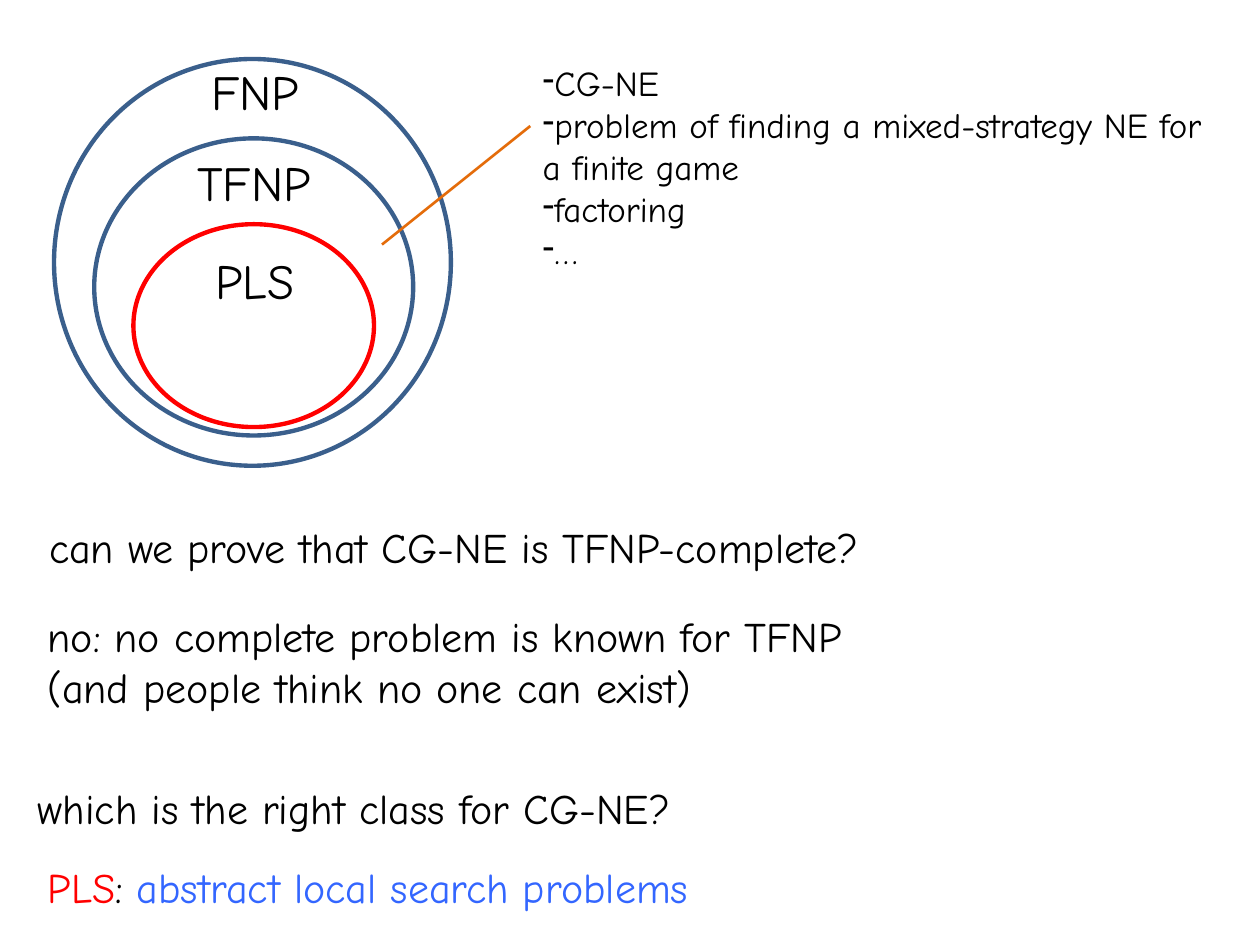
from pptx import Presentation
from pptx.dml.color import RGBColor
from pptx.enum.shapes import MSO_CONNECTOR, MSO_SHAPE
from pptx.enum.text import MSO_AUTO_SIZE, PP_ALIGN
from pptx.oxml.ns import qn
from pptx.util import Cm, Pt
from lxml.etree import SubElement

FONT = "Comic Neue"
BLACK, RED, BLUE = "000000", "FF0000", "3366FF"
RING_BLUE, ORANGE = "3A5F8C", "E46C0A"


def rgb(hex_string):
    """Turn a hex string into a colour."""
    return RGBColor.from_string(hex_string)


def style_run(run, size, color=BLACK):
    """Give a run its font, size and colour."""
    run.font.name = FONT
    run.font.size = Pt(size)
    run.font.color.rgb = rgb(color)


def add_line_of_text(slide, box, wording, size):
    """Place unwrapped black text in a box that fits it and return its frame."""
    frame = slide.shapes.add_textbox(*map(Cm, box)).text_frame
    frame.word_wrap = False
    frame.auto_size = MSO_AUTO_SIZE.SHAPE_TO_FIT_TEXT
    frame.text = wording
    frame.paragraphs[0].alignment = PP_ALIGN.LEFT
    for run in frame.paragraphs[0].runs:
        style_run(run, size)
    return frame


def add_class_diagram(slide, left, top, width, height):
    """Draw the nested complexity classes and the pointer out of TFNP."""
    classes = [
        ("FNP", RING_BLUE, (0, 0, width, height), (2.92, -0.07, 2.44)),
        ("TFNP", RING_BLUE, (0.81, 1.6, 6.43, 5.99), (2.64, 1.76, 3.12)),
        ("PLS", RED, (1.6, 3.33, 4.85, 4.09), (3, 3.74, 2.26)),
    ]
    for name, color, (x, y, ring_width, ring_height), label in classes:
        ring = slide.shapes.add_shape(
            MSO_SHAPE.OVAL, Cm(left + x), Cm(top + y), Cm(ring_width), Cm(ring_height))
        ring.shadow.inherit = False
        ring.fill.background()
        ring.line.color.rgb = rgb(color)
        ring.line.width = Pt(2.5)
        label_x, label_y, label_width = label
        add_line_of_text(
            slide, (left + label_x, top + label_y, label_width, 1.45), name, 28)

    pointer = slide.shapes.add_connector(
        MSO_CONNECTOR.STRAIGHT,
        Cm(left + 6.61), Cm(top + 3.74), Cm(left + 9.6), Cm(top + 1.35))
    pointer.line.color.rgb = rgb(ORANGE)
    pointer.line.width = Pt(1.5)
    SubElement(pointer._element.spPr, qn("a:effectLst"))


def add_problem_list(slide, left, top, width, height):
    """List the problems known to be in TFNP."""
    problems = [
        "CG-NE",
        "problem of finding a mixed-strategy NE for a finite game",
        "factoring",
        "…",
    ]
    frame = slide.shapes.add_textbox(Cm(left), Cm(top), Cm(width), Cm(height)).text_frame
    frame.word_wrap = True
    frame.text = "\n".join(problems)
    for problem in frame.paragraphs:
        problem.alignment = PP_ALIGN.LEFT
        style_run(problem.runs[0], 20)
        properties = problem._p.get_or_add_pPr()
        SubElement(properties, qn("a:buFontTx"))
        SubElement(properties, qn("a:buChar"), char="-")


def add_discussion(slide, left, top, width, height):
    """Set out the questions and answers about CG-NE."""
    add_line_of_text(
        slide, (left + 0.23, top, width, height),
        "can we prove that CG-NE is TFNP-complete?", 24)
    add_line_of_text(
        slide, (left + 0.2, top + 1.8, 17.96, 2.31),
        "no: no complete problem is known for TFNP \v(and people think no one can exist)", 24)
    add_line_of_text(
        slide, (left, top + 5.26, 14.66, height),
        "which is the right class for CG-NE?", 24)
    answer = add_line_of_text(
        slide, (left + 0.2, top + 6.86, 14.81, height), "PLS", 24).paragraphs[0]
    answer.runs[0].font.color.rgb = rgb(RED)
    for wording, color in [(": ", BLACK), ("abstract local search problems", BLUE)]:
        run = answer.add_run()
        run.text = wording
        style_run(run, 24, color)


def main():
    """Build the slide and save it."""
    presentation = Presentation()
    presentation.slide_width, presentation.slide_height = Cm(25.4), Cm(19.05)
    slide = presentation.slides.add_slide(presentation.slide_layouts[6])
    add_class_diagram(slide, 1.09, 1.19, 8, 8.2)
    add_problem_list(slide, 10.69, 1.12, 14.1, 2.82)
    add_discussion(slide, 0.51, 10.39, 18.29, 1.27)
    presentation.save("out.pptx")


if __name__ == "__main__":
    main()
